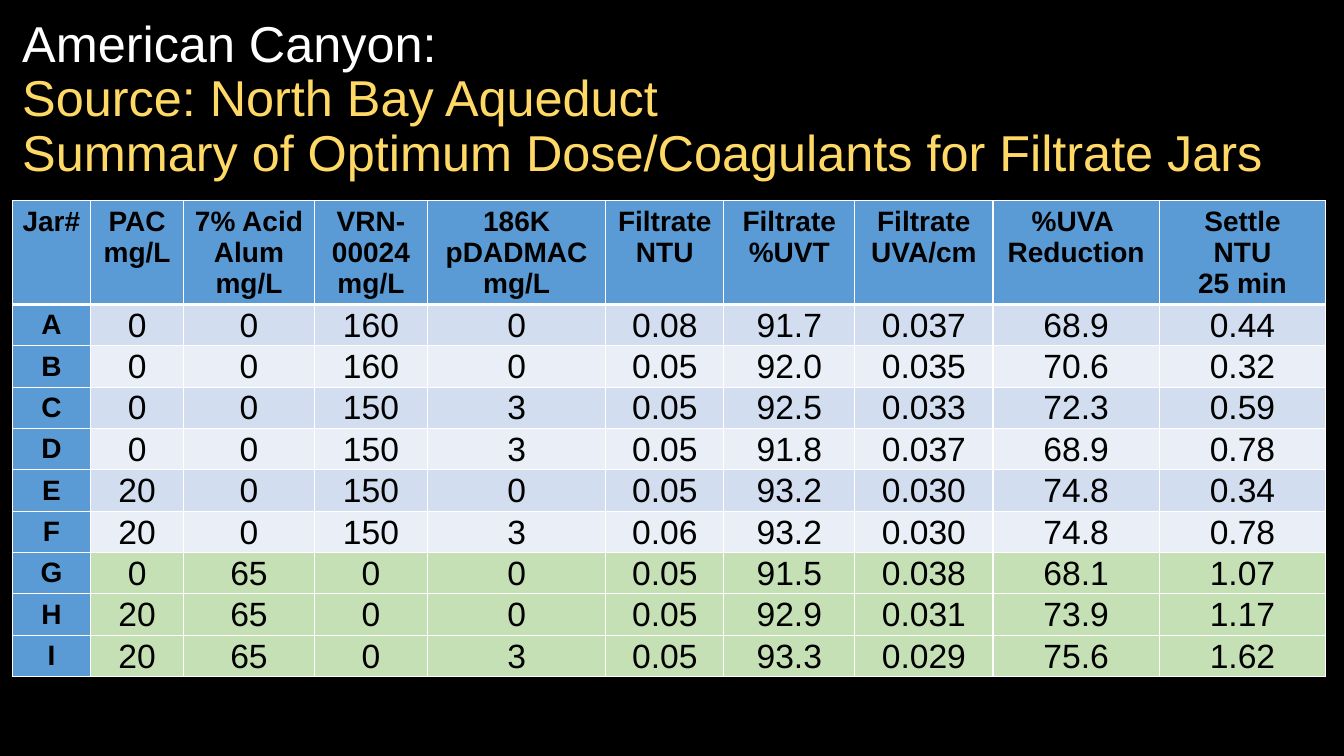
from copy import deepcopy

from lxml import etree
from pptx import Presentation
from pptx.dml.color import RGBColor
from pptx.enum.text import MSO_ANCHOR, MSO_AUTO_SIZE, PP_ALIGN
from pptx.oxml.ns import qn
from pptx.util import Inches, Pt

LEFT, CENTER = PP_ALIGN.LEFT, PP_ALIGN.CENTER
TOP, MIDDLE = MSO_ANCHOR.TOP, MSO_ANCHOR.MIDDLE
NO_AUTOFIT = MSO_AUTO_SIZE.NONE

WHITE, BLACK, GOLD = "FFFFFF", "000000", "FFD966"
BLUE, BAND_DARK, BAND_LIGHT, GREEN = "5B9BD5", "D2DEEF", "EAEFF7", "C5E0B4"

TITLE = [
    ("American Canyon: ", WHITE),
    ("Source: North Bay Aqueduct", GOLD),
    ("Summary of Optimum Dose/Coagulants for Filtrate Jars", GOLD),
]
COLUMN_WIDTHS = [0.78, 0.92, 1.3, 1.12, 1.77, 1.17, 1.3, 1.37, 1.65, 1.65]
HEADER_HEIGHT, ROW_HEIGHT = 1.02, 0.41
HEADERS = [
    "Jar#", "PAC\nmg/L", "7% Acid Alum\nmg/L", "VRN-\n00024\nmg/L",
    "186K\npDADMAC\nmg/L", "Filtrate\nNTU", "Filtrate\n%UVT",
    "Filtrate\nUVA/cm", "%UVA \nReduction", "Settle\nNTU\n25 min",
]
JARS = [
    "A 0 0 160 0 0.08 91.7 0.037 68.9 0.44",
    "B 0 0 160 0 0.05 92.0 0.035 70.6 0.32",
    "C 0 0 150 3 0.05 92.5 0.033 72.3 0.59",
    "D 0 0 150 3 0.05 91.8 0.037 68.9 0.78",
    "E 20 0 150 0 0.05 93.2 0.030 74.8 0.34",
    "F 20 0 150 3 0.06 93.2 0.030 74.8 0.78",
    "G 0 65 0 0 0.05 91.5 0.038 68.1 1.07",
    "H 20 65 0 0 0.05 92.9 0.031 73.9 1.17",
    "I 20 65 0 3 0.05 93.3 0.029 75.6 1.62",
]
FIRST_ALUM_ROW = 7


def rgb(value):
    return RGBColor.from_string(value)


def set_attrs(obj, values):
    for name, value in values.items():
        setattr(obj, name, value)


class SlideBuilder:
    """Holds the text style and the slide being built."""

    font_name = "Arial"
    label = {"size": Pt(20), "bold": True}
    value = {"size": Pt(24), "bold": False}
    label_cell = {
        "vertical_anchor": TOP, "margin_left": Inches(0.08),
        "margin_right": Inches(0.08),
    }
    value_cell = {
        "vertical_anchor": MIDDLE, "margin_left": Inches(0.01),
        "margin_top": Inches(0.01), "margin_right": Inches(0.01),
        "margin_bottom": 0,
    }

    def __init__(self, prs, background):
        self.s = prs.slides.add_slide(prs.slide_layouts[5])
        fill = self.s.background.fill
        fill.solid()
        fill.fore_color.rgb = rgb(background)

    def style(self, font, color, values):
        set_attrs(font, {"name": self.font_name, **values})
        font.color.rgb = rgb(color)

    def title(self, lines, left, top, width, height):
        sp = self.s.shapes.title
        set_attrs(sp, {"left": Inches(left), "top": Inches(top),
                       "width": Inches(width), "height": Inches(height)})
        tf = sp.text_frame
        set_attrs(tf, {"word_wrap": True, "auto_size": NO_AUTOFIT,
                       "vertical_anchor": MIDDLE})
        p = tf.paragraphs[0]
        set_attrs(p, {"alignment": LEFT, "line_spacing": 0.9})
        for i, (text, color) in enumerate(lines):
            if i:
                # A break needs the run's size to keep the line height even.
                p.add_line_break()
                p._p[-1].append(deepcopy(r.font._element))
            r = p.add_run()
            r.text = text
            self.style(r.font, color, {"size": Pt(36)})

    def borders(self, cell, top=1, bottom=1):
        tc_pr = cell._tc.get_or_add_tcPr()
        for side, points in (("L", 1), ("R", 1), ("T", top), ("B", bottom)):
            ln = etree.SubElement(tc_pr, qn(f"a:ln{side}"), w=str(Pt(points)))
            fill = etree.SubElement(ln, qn("a:solidFill"))
            etree.SubElement(fill, qn("a:srgbClr"), val=WHITE)

    def cell(self, cell, text, row, col):
        is_label = row == 0 or col == 0
        set_attrs(cell, self.label_cell if is_label else self.value_cell)
        self.borders(cell, 3 if row == 1 else 1, 3 if row == 0 else 1)
        if is_label:
            color = BLUE
        elif row >= FIRST_ALUM_ROW:
            color = GREEN
        else:
            color = BAND_DARK if row % 2 else BAND_LIGHT
        cell.fill.solid()
        cell.fill.fore_color.rgb = rgb(color)
        cell.text = text
        for p in cell.text_frame.paragraphs:
            p.alignment = CENTER
            for r in p.runs:
                self.style(r.font, BLACK, self.label if is_label else self.value)

    def table(self, rows, left, top):
        height = HEADER_HEIGHT + ROW_HEIGHT * (len(rows) - 1)
        table = self.s.shapes.add_table(
            len(rows), len(COLUMN_WIDTHS), Inches(left), Inches(top),
            Inches(sum(COLUMN_WIDTHS)), Inches(height)).table
        for column, width in zip(table.columns, COLUMN_WIDTHS):
            column.width = Inches(width)
        for i, texts in enumerate(rows):
            table.rows[i].height = Inches(ROW_HEIGHT if i else HEADER_HEIGHT)
            for j, text in enumerate(texts):
                self.cell(table.cell(i, j), text, i, j)


def main():
    prs = Presentation()
    prs.slide_width, prs.slide_height = Inches(13.33), Inches(7.5)
    slide = SlideBuilder(prs, BLACK)
    slide.title(TITLE, 0.12, 0.13, 13.03, 1.73)
    slide.table([HEADERS] + [jar.split() for jar in JARS], 0.12, 1.99)
    prs.save("out.pptx")


if __name__ == "__main__":
    main()
